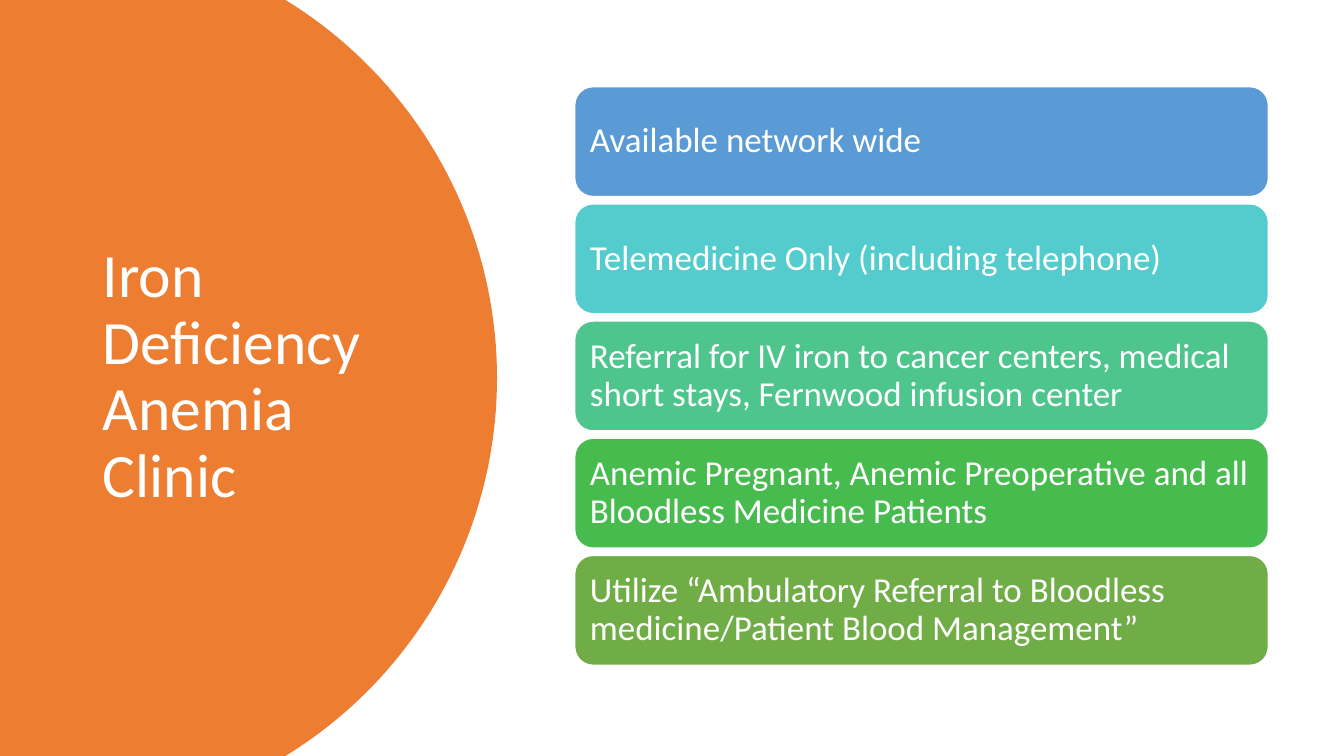
import math

from pptx import Presentation
from pptx import util as u
from pptx.dml.color import RGBColor
from pptx.enum import shapes, text

PX = 9144  # EMU per px, 100 px to the inch
SLIDE_W, SLIDE_H = 1333, 750
FONT = "Calibri"

WHITE = RGBColor(0xFF, 0xFF, 0xFF)
ORANGE = RGBColor(0xED, 0x7D, 0x31)
BLUE = RGBColor(0x5B, 0x9B, 0xD5)
TURQUOISE = RGBColor(0x54, 0xCC, 0xCD)
SEA_GREEN = RGBColor(0x4D, 0xC5, 0x8D)
GREEN = RGBColor(0x48, 0xBB, 0x4F)
OLIVE = RGBColor(0x70, 0xAD, 0x47)

TITLE = "Iron Deficiency Anemia Clinic"
POINTS = [
    ("Available network wide", BLUE),
    ("Telemedicine Only (including telephone)", TURQUOISE),
    ("Referral for IV iron to cancer centers, medical short stays, "
     "Fernwood infusion center", SEA_GREEN),
    ("Anemic Pregnant, Anemic Preoperative and all Bloodless Medicine Patients",
     GREEN),
    ("Utilize “Ambulatory Referral to Bloodless medicine/Patient Blood "
     "Management”", OLIVE),
]


def px(*lengths):
    return [u.Emu(round(length * PX)) for length in lengths]


def write(frame, wording, size):
    frame.word_wrap = True
    frame.vertical_anchor = text.MSO_ANCHOR.MIDDLE
    frame.text = wording
    paragraph = frame.paragraphs[0]
    paragraph.alignment = text.PP_ALIGN.LEFT
    paragraph.line_spacing = 0.9
    font = paragraph.runs[0].font
    font.name, font.size, font.color.rgb = FONT, u.Pt(size), WHITE


def add_title_panel(slide, left, top, width, height):
    # Panel whose right side is an arc of a large circle
    radius, steps = 440, 80
    center_x, center_y = left + width - radius, top + height / 2
    half_angle = math.asin(height / 2 / radius)
    angles = [half_angle * (2 * i / steps - 1) for i in range(steps + 1)]
    arc = [(center_x + radius * math.cos(a), center_y + radius * math.sin(a))
           for a in angles]
    outline = slide.shapes.build_freeform(*px(left, top), scale=1.0)
    outline.add_line_segments([px(*point) for point in arc]
                              + [px(left, top + height)])
    panel = outline.convert_to_shape()
    panel.shadow.inherit = False
    panel.fill.solid()
    panel.fill.fore_color.rgb = ORANGE
    panel.line.fill.background()

    # Title
    title = slide.shapes.add_textbox(
        *px(left + 92, top + 70, width - 170, height - 141))
    write(title.text_frame, TITLE, 44)


def add_point_cards(slide, left, top, width, height):
    card_height = 109
    pitch = (height - card_height) / (len(POINTS) - 1)
    for row, (wording, color) in enumerate(POINTS):
        card = slide.shapes.add_shape(
            shapes.MSO_SHAPE.ROUNDED_RECTANGLE,
            *px(left, top + row * pitch, width, card_height))
        card.shadow.inherit = False
        card.fill.solid()
        card.fill.fore_color.rgb = color
        card.line.color.rgb = WHITE
        card.line.width = u.Pt(1)
        frame = card.text_frame
        frame.margin_left, frame.margin_right = px(10, 10)
        frame.margin_top, frame.margin_bottom = px(10, 10)
        write(frame, wording, 25)


def main():
    deck = Presentation()
    deck.slide_width, deck.slide_height = px(SLIDE_W, SLIDE_H)
    slide = deck.slides.add_slide(deck.slide_layouts[6])
    add_title_panel(slide, 0, 0, 493, SLIDE_H)
    add_point_cards(slide, 570, 86, 688, 574)
    deck.save("out.pptx")


if __name__ == "__main__":
    main()
